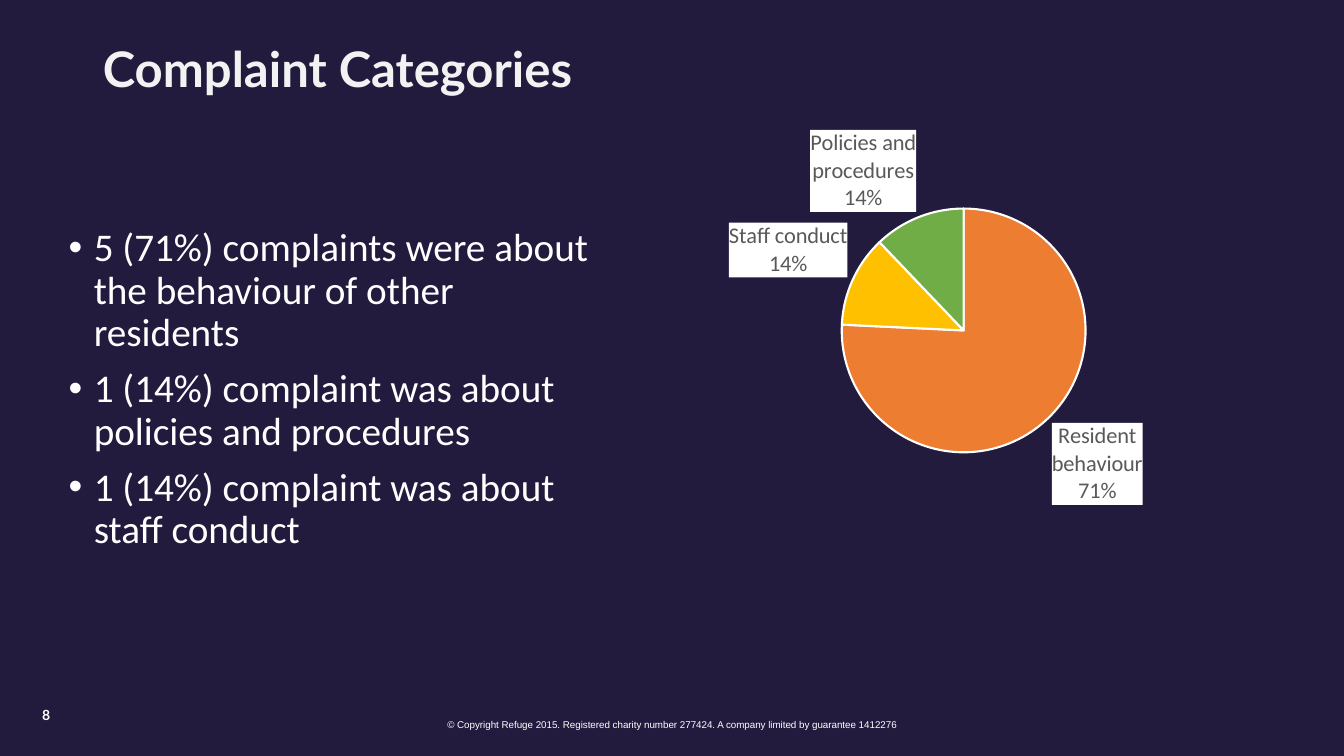
import dataclasses

import lxml.etree
import pptx
import pptx.chart.data
import pptx.dml.color
import pptx.enum.chart
import pptx.enum.text
import pptx.oxml
import pptx.oxml.ns
import pptx.util

ALIGN = pptx.enum.text.PP_ALIGN
PLACE = pptx.enum.chart.XL_LABEL_POSITION


@dataclasses.dataclass(frozen=True)
class Theme:
    back: str = "221B3E"
    white: str = "FFFFFF"
    pale: str = "F2F2F2"
    grey: str = "595959"
    slices: tuple = ("ED7D31", "FFC000", "70AD47")
    head_face: str = "Lato"
    text_face: str = "Calibri"
    foot_face: str = "Arial"
    head_size: int = 35
    text_size: int = 28
    label_size: int = 16
    page_size: int = 10
    foot_size: int = 7


THEME = Theme()
WIDE = pptx.util.Inches(13.33)
HIGH = pptx.util.Inches(7.5)


def color(code):
    return pptx.dml.color.RGBColor.from_string(code)


def span(left, top, width, height):
    return [round(size * share / 100) for size, share in
            ((WIDE, left), (HIGH, top), (WIDE, width), (HIGH, height))]


def move(shape, area):
    shape.left, shape.top, shape.width, shape.height = area


def style(font, face, size, code, bold=False):
    font.name = face
    font.size = pptx.util.Pt(size)
    font.color.rgb = color(code)
    font.bold = bold


def set_frame(shape):
    frame = shape.text_frame
    frame.word_wrap = True
    frame.auto_size = pptx.enum.text.MSO_AUTO_SIZE.NONE
    frame.vertical_anchor = pptx.enum.text.MSO_ANCHOR.TOP
    return frame


def put_title(slide, text, area):
    move(slide.shapes.title, area)
    line = set_frame(slide.shapes.title).paragraphs[0]
    line.text = text
    line.alignment = ALIGN.LEFT
    line.line_spacing = 0.9
    style(line.font, THEME.head_face, THEME.head_size, THEME.pale, True)


def put_list(slide, items, area):
    body = slide.placeholders[1]
    move(body, area)
    frame = set_frame(body)
    frame.text = "\n".join(items)
    indent = pptx.util.Inches(0.25)
    for place, line in enumerate(frame.paragraphs):
        line.line_spacing = 0.9
        line.space_before = pptx.util.Pt(10 if place else 0)
        props = line._p.get_or_add_pPr()
        props.set("marL", str(indent))
        props.set("indent", str(-indent))
        for tag, key, value in (("a:buFont", "typeface", THEME.foot_face),
                                ("a:buChar", "char", "•")):
            mark = lxml.etree.SubElement(props, pptx.oxml.ns.qn(tag))
            mark.set(key, value)
        style(line.font, THEME.text_face, THEME.text_size, THEME.white)


def put_text(slide, text, area, face, size, align, bold=False):
    line = set_frame(slide.shapes.add_textbox(*area)).paragraphs[0]
    line.text = text
    line.alignment = align
    style(line.font, face, size, THEME.white, bold)


def set_plot(chart, left, top, width, height):
    parts = "".join(f'<c:{key} val="{value}"/>' for key, value in (
        ("layoutTarget", "inner"), ("xMode", "edge"), ("yMode", "edge"),
        ("x", left), ("y", top), ("w", width), ("h", height)))
    space = pptx.oxml.ns.nsdecls("c")
    layout = pptx.oxml.parse_xml(
        f"<c:layout {space}><c:manualLayout>{parts}</c:manualLayout></c:layout>")
    area = chart._chartSpace.chart.plotArea
    for old in area.findall(pptx.oxml.ns.qn("c:layout")):
        area.remove(old)
    area.insert(0, layout)


def fill_labels(chart):
    space = pptx.oxml.ns.nsdecls("c", "a")
    for text in chart._chartSpace.xpath(".//c:dLbl/c:tx"):
        text.addnext(pptx.oxml.parse_xml(
            f'<c:spPr {space}><a:solidFill><a:srgbClr val="{THEME.white}"/>'
            "</a:solidFill></c:spPr>"))


def put_pie(slide, names, values, labels, area):
    data = pptx.chart.data.CategoryChartData()
    data.categories = names
    data.add_series("Complaints", values)
    kind = pptx.enum.chart.XL_CHART_TYPE.PIE
    chart = slide.shapes.add_chart(kind, *area, data).chart
    chart.has_legend = False
    chart.has_title = False
    style(chart.font, THEME.text_face, THEME.label_size, THEME.grey)
    plot = chart.plots[0]
    plot.vary_by_categories = True
    for place, (code, label) in enumerate(zip(THEME.slices, labels)):
        point = plot.series[0].points[place]
        point.format.fill.solid()
        point.format.fill.fore_color.rgb = color(code)
        point.format.line.color.rgb = color(THEME.white)
        point.format.line.width = pptx.util.Pt(1.5)
        note = point.data_label
        note.text_frame.text = label
        for line in note.text_frame.paragraphs:
            for run in line.runs:
                style(run.font, THEME.text_face, THEME.label_size, THEME.grey)
        note.position = PLACE.OUTSIDE_END
    fill_labels(chart)
    set_plot(chart, 0.31, 0.2, 0.41, 0.53)


def main():
    deck = pptx.Presentation()
    deck.slide_width, deck.slide_height = WIDE, HIGH
    slide = deck.slides.add_slide(deck.slide_layouts[1])
    slide.background.fill.solid()
    slide.background.fill.fore_color.rgb = color(THEME.back)
    put_title(slide, "Complaint Categories", span(6.9, 5.33, 87.4, 15.2))
    put_list(slide, (
        "5 (71%) complaints were about the behaviour of other residents",
        "1 (14%) complaint was about policies and procedures",
        "1 (14%) complaint was about staff conduct",
    ), span(4.35, 29.47, 40.36, 44.67))
    put_pie(slide,
            ("Resident behaviour", "Staff conduct", "Policies and procedures"),
            (75, 12, 12),
            ("Resident behaviour\n71%", "Staff conduct 14%",
             "Policies and procedures\n14%"),
            span(48.91, 15.2, 44.26, 61.33))
    put_text(slide, "© Copyright Refuge 2015. Registered charity number 277424. "
             "A company limited by guarantee 1412276", span(0, 94.4, 100, 2.93),
             THEME.foot_face, THEME.foot_size, ALIGN.CENTER)
    put_text(slide, "8", span(2.4, 92.8, 22.5, 5.33),
             THEME.head_face, THEME.page_size, ALIGN.LEFT, True)
    deck.save("out.pptx")


if __name__ == "__main__":
    main()
